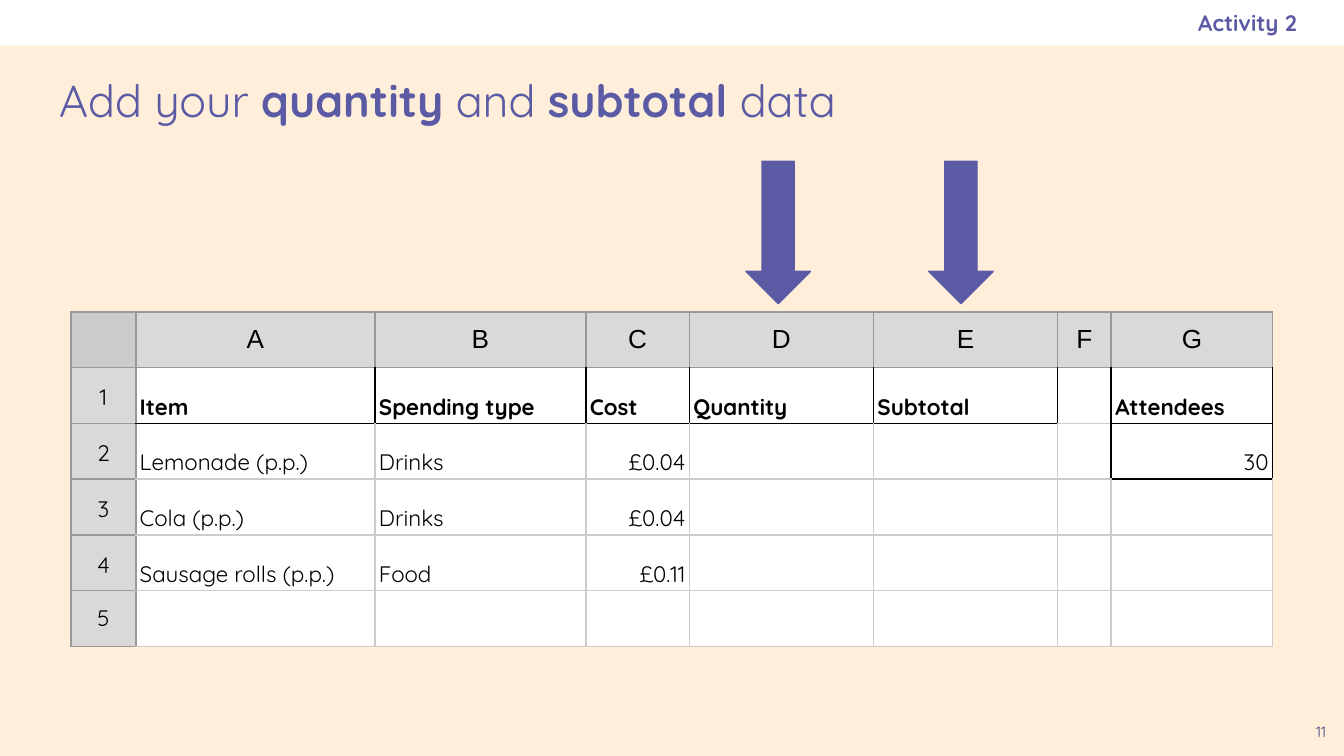
import dataclasses
import lxml.etree
import pptx
import pptx.dml.color
import pptx.enum.shapes
import pptx.enum.text
import pptx.oxml.ns
import pptx.util

Inches, Pt = pptx.util.Inches, pptx.util.Pt
RGB = pptx.dml.color.RGBColor.from_string
Align = pptx.enum.text.PP_ALIGN
Anchor = pptx.enum.text.MSO_ANCHOR
Shape = pptx.enum.shapes.MSO_SHAPE
qn = pptx.oxml.ns.qn


@dataclasses.dataclass
class Theme:
    cream: str = "FFEFDA"
    white: str = "FFFFFF"
    black: str = "000000"
    purple: str = "5B5BA5"
    dark: str = "494985"
    head: str = "D9D9D9"
    rule: str = "999999"
    grid: str = "CCCCCC"
    font: str = "Quicksand"
    plain: str = "Arial"
    title: int = 24
    letter: int = 14
    body: int = 12
    small: int = 8


theme = Theme()


def write(frame, text, size=theme.body, color=theme.black, font=theme.font,
          bold=False, align=Align.LEFT, spacing=1.0):
    """Fill the frame; parts between asterisks switch to bold."""
    line = frame.paragraphs[0]
    line.alignment = align
    line.line_spacing = spacing
    for i, part in enumerate(text.split("*")):
        run = line.add_run()
        run.text = part
        run.font.size = Pt(size)
        run.font.name = font
        run.font.bold = bold or i % 2 == 1
        run.font.color.rgb = RGB(color)


def border(cell, side, color):
    line = lxml.etree.SubElement(cell._tc.get_or_add_tcPr(), qn(f"a:ln{side}"), w=str(Pt(1)))
    fill = lxml.etree.SubElement(line, qn("a:solidFill"))
    lxml.etree.SubElement(fill, qn("a:srgbClr"), val=color)


# A 16:9 slide
deck = pptx.Presentation()
deck.slide_width, deck.slide_height = Inches(10), Inches(10 * 9 / 16)
slide = deck.slides.add_slide(deck.slide_layouts[0])
slide.background.fill.solid()
slide.background.fill.fore_color.rgb = RGB(theme.cream)
shapes = slide.shapes

# White band behind the activity label
band = shapes.add_shape(Shape.RECTANGLE, 0, 0, Inches(10), Inches(0.34))
band.shadow.inherit = False
band.fill.solid()
band.fill.fore_color.rgb = RGB(theme.white)
band.line.fill.background()
shapes._spTree.insert(2, band._element)

# Title, activity label and page number
title, label = shapes.title, slide.placeholders[1]
page = shapes.add_textbox(0, 0, 0, 0)
for box, place, anchor in (
    (title, (0.34, 0.35, 9.32, 0.78), Anchor.MIDDLE),
    (label, (5.75, 0, 3.9, 0.34), Anchor.MIDDLE),
    (page, (9.66, 5.28, 0.34, 0.34), Anchor.TOP),
):
    box.left, box.top, box.width, box.height = map(Inches, place)
    frame = box.text_frame
    frame.word_wrap = True
    frame.auto_size = pptx.enum.text.MSO_AUTO_SIZE.NONE
    frame.vertical_anchor = anchor
    frame.margin_left = frame.margin_right = Inches(0.1)
    frame.margin_top = frame.margin_bottom = Inches(0.1)
label.text_frame.margin_right = 0
write(title.text_frame, "Add your *quantity* and *subtotal* data",
      size=theme.title, color=theme.purple)
write(label.text_frame, "Activity 2", color=theme.purple, bold=True, align=Align.RIGHT)
write(page.text_frame, "11", size=theme.small, color=theme.dark, align=Align.CENTER)

# Spreadsheet
rows = [
    ["", "A", "B", "C", "D", "E", "F", "G"],
    ["1", "Item", "Spending type", "Cost", "Quantity", "Subtotal", "", "Attendees"],
    ["2", "Lemonade (p.p.)", "Drinks", "£0.04", "", "", "", "30"],
    ["3", "Cola (p.p.)", "Drinks", "£0.04", "", "", "", ""],
    ["4", "Sausage rolls (p.p.)", "Food", "£0.11", "", "", "", ""],
    ["5", "", "", "", "", "", "", ""],
]
widths = [0.48, 1.78, 1.57, 0.77, 1.37, 1.37, 0.4, 1.2]
boxed = {(1, c) for c in (1, 2, 3, 4, 5, 7)} | {(2, 7)}
sides = {"L": (0, -1), "R": (0, 1), "T": (-1, 0), "B": (1, 0)}

sheet = shapes.add_table(len(rows), len(widths), Inches(0.53), Inches(2.32),
                         Inches(sum(widths)), Inches(2.49)).table
sheet.first_row = sheet.horz_banding = False
for column, width in zip(sheet.columns, widths):
    column.width = Inches(width)

for r, row in enumerate(rows):
    for c, text in enumerate(row):
        cell = sheet.cell(r, c)
        header = r == 0 or c == 0
        # An edge takes the stronger style of the two cells it parts
        for side, (down, across) in sides.items():
            near = (r + down, c + across)
            if header or 0 in near:
                color = theme.rule
            elif (r, c) in boxed or near in boxed:
                color = theme.black
            else:
                color = theme.grid
            border(cell, side, color)
        cell.fill.solid()
        corner = r == c == 0
        tone = theme.grid if corner else theme.head if header else theme.white
        cell.fill.fore_color.rgb = RGB(tone)
        cell.margin_left = cell.margin_right = Inches(0.03)
        cell.margin_top = cell.margin_bottom = Inches(0.02)
        cell.vertical_anchor = Anchor.MIDDLE if header else Anchor.BOTTOM
        if not text:
            continue
        if r == 0:
            write(cell.text_frame, text, size=theme.letter, font=theme.plain,
                  align=Align.CENTER)
        else:
            number = r > 1 and c in (3, 7)
            align = Align.CENTER if header else Align.RIGHT if number else Align.LEFT
            write(cell.text_frame, text, bold=r == 1 and c > 0, align=align,
                  spacing=1.0 if r == 5 else 1.15)

# Arrows to the Quantity and Subtotal columns
for left in (5.55, 6.91):
    arrow = shapes.add_shape(Shape.DOWN_ARROW, Inches(left), Inches(1.2),
                             Inches(0.48), Inches(1.06))
    arrow.shadow.inherit = False
    arrow.fill.solid()
    arrow.fill.fore_color.rgb = RGB(theme.purple)
    arrow.line.color.rgb = RGB(theme.purple)
    arrow.line.width = Pt(0.75)

deck.save("out.pptx")
